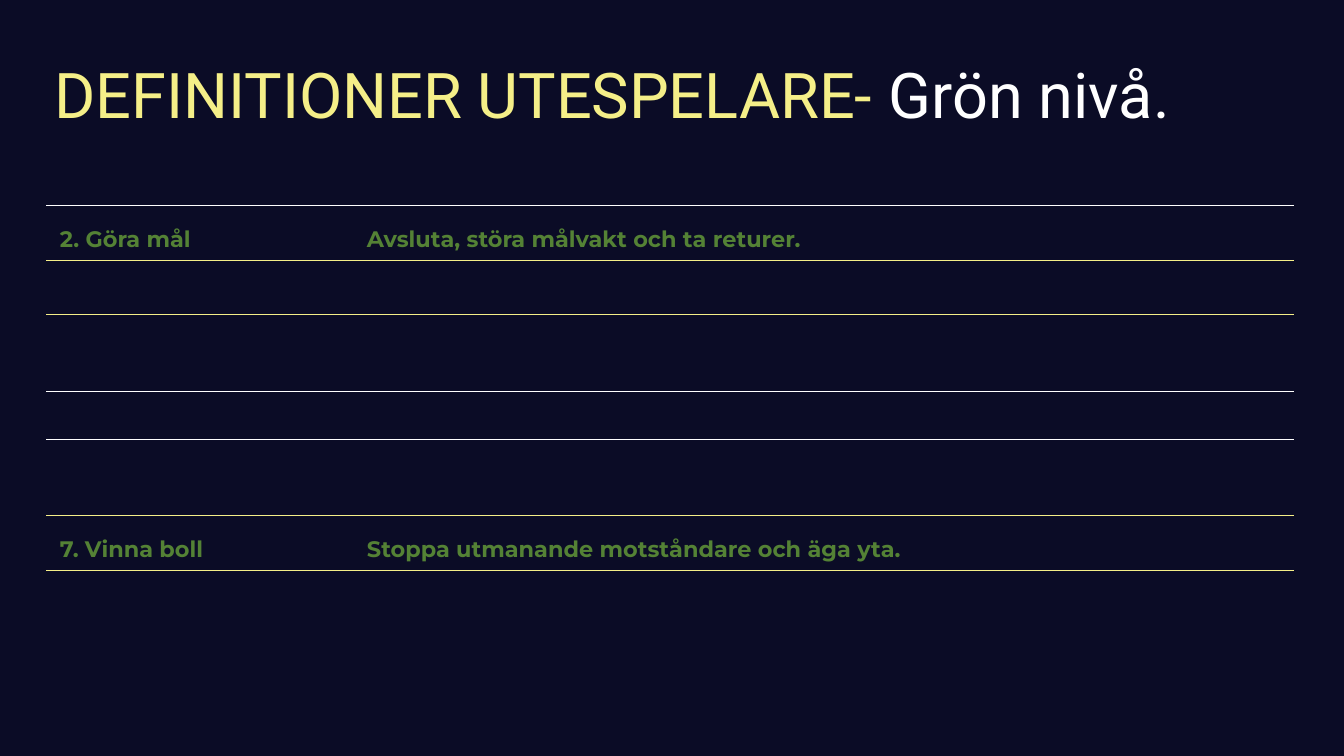
import pptx
import pptx.util
import pptx.dml.color
import pptx.enum.text
import pptx.oxml
import pptx.oxml.ns

Inches, Pt = pptx.util.Inches, pptx.util.Pt

COLORS = {"night": "0B0C26", "yellow": "F5EF88", "white": "FFFFFF", "green": "548235"}
COLUMN_WIDTHS = [6.09, 18.66]
ROW_HEIGHTS = [1.08, 1.08, 1.08, 1.52, 0.95, 1.52, 1.08, 1.08]
# Colour of the rule above each row, and below the last one
RULES = [None, "white", "yellow", "yellow", "white", "white", "yellow", "yellow", None]
DEFINITIONS = {
    1: ("2. Göra mål", "Avsluta, störa målvakt och ta returer."),
    6: ("7. Vinna boll", "Stoppa utmanande motståndare och äga yta."),
}


def rgb(name):
    return pptx.dml.color.RGBColor.from_string(COLORS[name])


def format_run(run, font, size, color, bold=False):
    run.font.name = font
    run.font.size = Pt(size)
    run.font.bold = bold
    run.font.color.rgb = rgb(color)


def add_title(slide, parts):
    title = slide.shapes.title
    title.left, title.top = Inches(0.98), Inches(0.5)
    title.width, title.height = Inches(23), Inches(2.9)
    frame = title.text_frame
    frame.word_wrap = True
    frame.auto_size = pptx.enum.text.MSO_AUTO_SIZE.NONE
    frame.vertical_anchor = pptx.enum.text.MSO_ANCHOR.MIDDLE
    heading = frame.paragraphs[0]
    heading.alignment = pptx.enum.text.PP_ALIGN.LEFT
    heading.line_spacing = 0.9
    for text, color in parts:
        run = heading.add_run()
        run.text = text
        format_run(run, "Roboto", 90, color)


def set_border(cell, side, color):
    if color:
        paint = f'<a:solidFill><a:srgbClr val="{COLORS[color]}"/></a:solidFill>'
    else:
        paint = "<a:noFill/>"
    namespace = pptx.oxml.ns.nsdecls("a")
    line = pptx.oxml.parse_xml(f'<a:ln{side} {namespace} w="{Pt(0.5)}">{paint}</a:ln{side}>')
    cell._tc.get_or_add_tcPr().append(line)


def write_cell(cell, text):
    cell.margin_left = cell.margin_right = Inches(0.27)
    cell.margin_top = cell.margin_bottom = Inches(0.13)
    cell.text_frame.text = text
    paragraph = cell.text_frame.paragraphs[0]
    paragraph.line_spacing = 1.5
    format_run(paragraph.runs[0], "Montserrat", 32, "green", bold=True)


def add_definitions(slide):
    table = slide.shapes.add_table(
        len(ROW_HEIGHTS), len(COLUMN_WIDTHS), Inches(0.92), Inches(3),
        Inches(sum(COLUMN_WIDTHS)), Inches(sum(ROW_HEIGHTS))).table
    table.first_row = table.horz_banding = False
    for column, width in zip(table.columns, COLUMN_WIDTHS):
        column.width = Inches(width)
    for index, (row, height) in enumerate(zip(table.rows, ROW_HEIGHTS)):
        row.height = Inches(height)
        borders = {"L": None, "R": None, "T": RULES[index], "B": RULES[index + 1]}
        for cell in row.cells:
            for side, color in borders.items():
                set_border(cell, side, color)
            if index == 0:
                cell.fill.solid()
                cell.fill.fore_color.rgb = rgb("night")
            else:
                cell.fill.background()
        for cell, text in zip(row.cells, DEFINITIONS.get(index, ())):
            write_cell(cell, text)


def main():
    presentation = pptx.Presentation()
    presentation.slide_width = Inches(26.66)
    presentation.slide_height = Inches(15)
    slide = presentation.slides.add_slide(presentation.slide_layouts[5])

    # Background
    slide.background.fill.solid()
    slide.background.fill.fore_color.rgb = rgb("night")

    # The table's first row reaches under the title, so the title comes first
    add_title(slide, [("DEFINITIONER UTESPELARE- ", "yellow"), ("Grön nivå.", "white")])
    add_definitions(slide)

    presentation.save("out.pptx")


if __name__ == "__main__":
    main()
